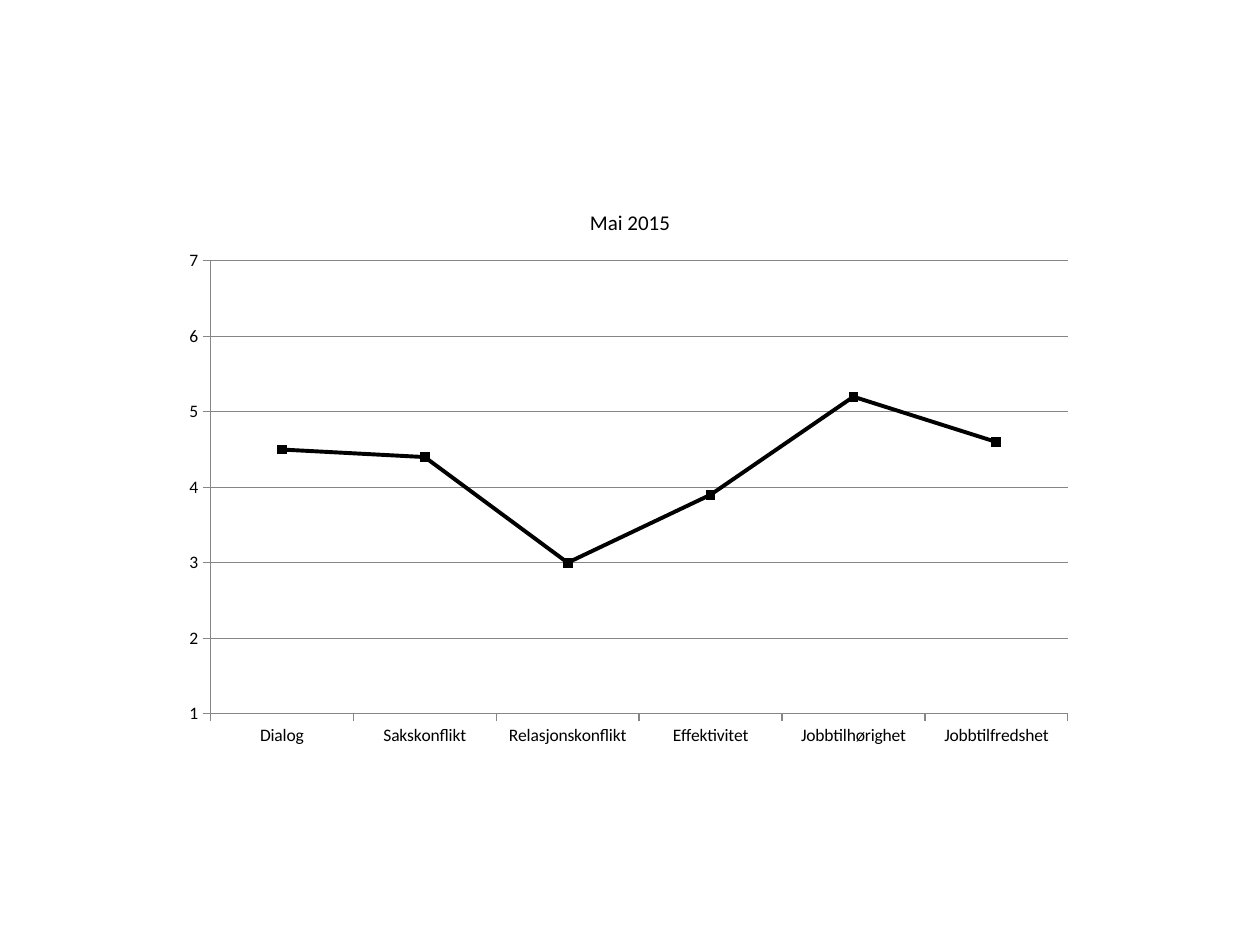
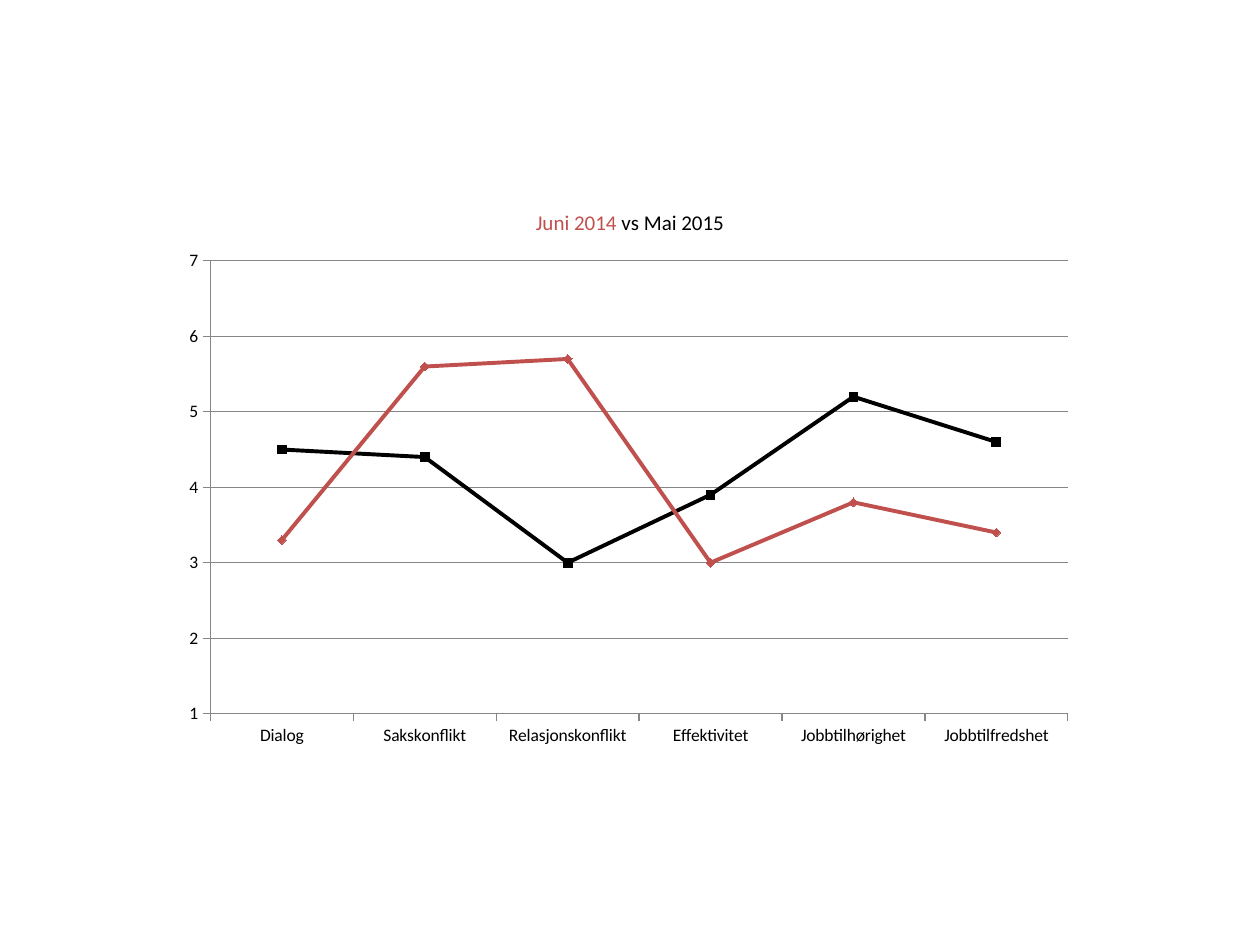
import pptx
import pptx.chart.data
import pptx.dml.color
import pptx.enum.chart
import pptx.util
from lxml import etree
from pptx.util import Inches, Pt

# Shared style
FONT = "Calibri"
BLACK, RED, GREY = "000000", "C0504D", "868686"
CATEGORIES = ["Dialog", "Sakskonflikt", "Relasjonskonflikt",
              "Effektivitet", "Jobbtilhørighet", "Jobbtilfredshet"]
PLOT_AREA = {"x": 0.04, "y": 0.13, "w": 0.94, "h": 0.79}
SQUARE = pptx.enum.chart.XL_MARKER_STYLE.SQUARE
DIAMOND = pptx.enum.chart.XL_MARKER_STYLE.DIAMOND

# Each survey: values, colour, marker
MAY_2015 = ([4.5, 4.4, 3, 3.9, 5.2, 4.6], BLACK, SQUARE)
JUNE_2014 = ([3.3, 5.6, 5.7, 3, 3.8, 3.4], RED, DIAMOND)


def rgb(color):
    return pptx.dml.color.RGBColor.from_string(color)


def set_font(font, size, color):
    font.name, font.size, font.bold = FONT, Pt(size), False
    font.color.rgb = rgb(color)


def set_line(line, width, color):
    line.width = Pt(width)
    line.color.rgb = rgb(color)


def add_title(chart, runs):
    chart.has_title = True
    chart.chart_title.include_in_layout = False
    p = chart.chart_title.text_frame.paragraphs[0]
    for text, color in runs:
        r = p.add_run()
        r.text = text
        set_font(r.font, 12, color)


def style_axes(chart):
    outside = pptx.enum.chart.XL_TICK_MARK.OUTSIDE
    for axis in (chart.category_axis, chart.value_axis):
        axis.major_tick_mark = outside
        axis.minor_tick_mark = pptx.enum.chart.XL_TICK_MARK.NONE
        set_line(axis.format.line, 0.75, GREY)
    values = chart.value_axis
    values.minimum_scale, values.maximum_scale, values.major_unit = 1, 7, 1
    values.tick_labels.number_format = "0"
    values.tick_labels.number_format_is_linked = False
    values.has_major_gridlines = True
    set_line(values.major_gridlines.format.line, 0.75, GREY)


def style_series(series, color, marker):
    series.smooth = False
    set_line(series.format.line, 2.25, color)
    series.marker.style, series.marker.size = marker, 5
    series.marker.format.fill.solid()
    series.marker.format.fill.fore_color.rgb = rgb(color)
    set_line(series.marker.format.line, 0.75, color)


def place_plot(chart):
    """Fix the inner plot area as fractions of the chart frame."""
    plot_area = chart.plots[0]._element.getparent()
    ns = "{%s}" % plot_area.nsmap["c"]
    for old in plot_area.findall(ns + "layout"):
        plot_area.remove(old)
    layout = etree.Element(ns + "layout")
    manual = etree.SubElement(layout, ns + "manualLayout")
    settings = {"layoutTarget": "inner", "xMode": "edge", "yMode": "edge", **PLOT_AREA}
    for tag, value in settings.items():
        etree.SubElement(manual, ns + tag).set("val", str(value))
    plot_area.insert(0, layout)


def add_survey_chart(s, title_runs, surveys):
    data = pptx.chart.data.CategoryChartData()
    data.categories = CATEGORIES
    for number, (values, _, _) in enumerate(surveys, 1):
        data.add_series(f"Series {number}", values)
    chart = s.shapes.add_chart(
        pptx.enum.chart.XL_CHART_TYPE.LINE_MARKERS,
        Inches(1.38), Inches(1.48), Inches(7.24), Inches(4.55), data).chart
    chart.has_legend = False
    set_font(chart.font, 10, BLACK)
    add_title(chart, title_runs)
    style_axes(chart)
    chart.plots[0].vary_by_categories = False
    for series, (_, color, marker) in zip(chart.plots[0].series, surveys):
        style_series(series, color, marker)
    place_plot(chart)


def main():
    prs = pptx.Presentation()
    prs.slide_width, prs.slide_height = Inches(10), Inches(7.5)
    blank = prs.slide_layouts[6]

    # Slide 1: latest survey
    add_survey_chart(prs.slides.add_slide(blank), [("Mai 2015", BLACK)], [MAY_2015])

    # Slide 2: comparison of both surveys
    add_survey_chart(prs.slides.add_slide(blank),
                     [("Juni 2014", RED), (" vs Mai 2015", BLACK)],
                     [MAY_2015, JUNE_2014])

    prs.save("out.pptx")


if __name__ == "__main__":
    main()
